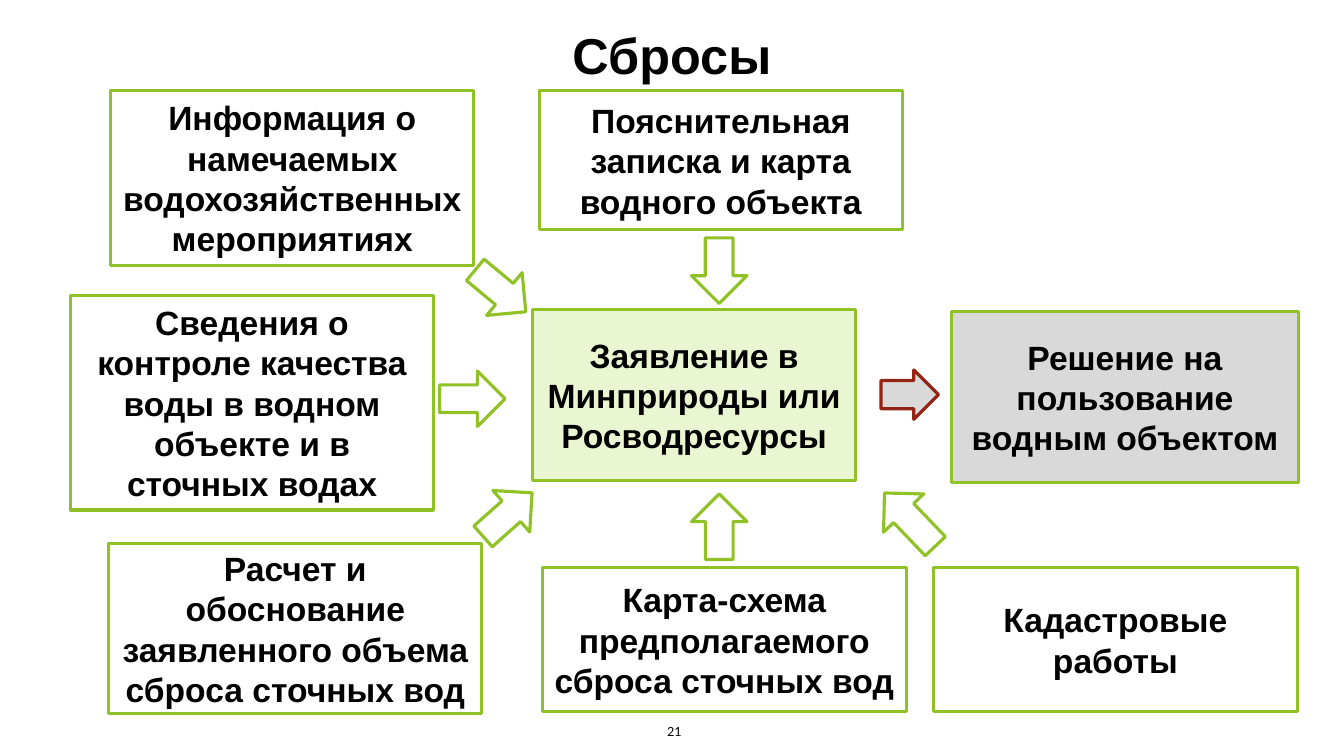
from pptx import Presentation
from pptx.dml.color import RGBColor
from pptx.enum.shapes import MSO_SHAPE as Preset
from pptx.enum.text import MSO_ANCHOR as Anchor, PP_ALIGN as Align
from pptx.util import Inches, Pt

BLACK = RGBColor(0x00, 0x00, 0x00)
WHITE = RGBColor(0xFF, 0xFF, 0xFF)
GREEN = RGBColor(0x90, 0xC2, 0x26)
PALE_GREEN = RGBColor(0xEA, 0xF6, 0xD1)
GREY = RGBColor(0xD9, 0xD9, 0xD9)
DARK_RED = RGBColor(0x93, 0x23, 0x13)


class DiagramSlide:
    """Draws on one slide; every area is in percent of the slide's size."""

    font = "Arial"
    line_width = Pt(2.25)

    def __init__(self, presentation):
        self.width = presentation.slide_width
        self.height = presentation.slide_height
        self.slide = presentation.slides.add_slide(presentation.slide_layouts[5])

    def place(self, left, top, width, height):
        return (round(self.width * left / 100), round(self.height * top / 100),
                round(self.width * width / 100), round(self.height * height / 100))

    def set_label(self, shape, text, size, bold=True, font=font,
                  align=Align.CENTER, anchor=Anchor.MIDDLE):
        frame = shape.text_frame
        frame.text = text
        frame.word_wrap = True
        frame.vertical_anchor = anchor
        paragraph = frame.paragraphs[0]
        paragraph.alignment = align
        style = paragraph.runs[0].font
        style.name, style.size, style.bold = font, Pt(size), bold
        style.color.rgb = BLACK

    def title(self, text, area):
        shape = self.slide.shapes.title
        shape.left, shape.top, shape.width, shape.height = self.place(*area)
        self.set_label(shape, text, 36, anchor=Anchor.TOP)

    def outlined(self, preset, area, fill, line):
        shape = self.slide.shapes.add_shape(preset, *self.place(*area))
        shape.shadow.inherit = False
        shape.fill.solid()
        shape.fill.fore_color.rgb = fill
        shape.line.color.rgb = line
        shape.line.width = self.line_width
        return shape

    def box(self, text, area, fill=WHITE):
        shape = self.outlined(Preset.RECTANGLE, area, fill, GREEN)
        self.set_label(shape, text, 24)

    def arrow(self, area, rotation, fill=WHITE, line=GREEN, shaft=0.5):
        shape = self.outlined(Preset.DOWN_ARROW, area, fill, line)
        shape.adjustments[0] = shaft
        shape.rotation = rotation

    def page_number(self, text, area):
        shape = self.slide.shapes.add_textbox(*self.place(*area))
        self.set_label(shape, text, 9, bold=False, font="Lato", align=Align.RIGHT)


def main():
    presentation = Presentation()
    presentation.slide_width = Inches(13.33)
    presentation.slide_height = Inches(7.5)
    diagram = DiagramSlide(presentation)
    diagram.title("Сбросы", (32.93, 2.53, 34.13, 9.47))

    # Documents attached to the application
    documents = [
        ("Сведения о контроле качества воды в водном объекте и в сточных водах",
         (5.25, 39.07, 27, 28.4)),
        ("Пояснительная записка и карта водного объекта", (40.13, 12, 27, 18.4)),
        ("Информация о намечаемых водохозяйственных мероприятиях",
         (8.25, 12, 27, 23.07)),
        ("Карта-схема предполагаемого сброса сточных вод",
         (40.35, 75.07, 27.08, 19.07)),
        ("Расчет и обоснование заявленного объема сброса сточных вод",
         (8.1, 71.87, 27.75, 22.53)),
        ("Кадастровые работы", (69.45, 75.07, 27.08, 19.07)),
    ]
    for text, area in documents:
        diagram.box(text, area)

    # Application and the resulting decision
    diagram.box("Заявление в Минприроды или Росводресурсы",
                (39.6, 40.93, 24.08, 22.67), PALE_GREEN)
    diagram.box("Решение на пользование водным объектом",
                (70.8, 41.2, 25.8, 22.67), GREY)

    # Arrows towards the application: left, top, height, rotation
    for left, top, height, rotation in [
        (35.18, 34.13, 8.67, 309.7),
        (51.45, 31.47, 8.67, 0),
        (33.08, 48.4, 8.67, 270),
        (35.7, 63.73, 8.67, 228.4),
        (51.45, 65.33, 8.67, 180),
        (65.63, 63.87, 9.73, 136.4),
    ]:
        diagram.arrow((left, top, 4.13, height), rotation)

    # Arrow from the application to the decision
    diagram.arrow((65.85, 48.4, 3.68, 7.6), 270, GREY, DARK_RED, shaft=0.57)

    diagram.page_number("21", (45.83, 94.13, 5.63, 5.33))
    presentation.save("out.pptx")


if __name__ == "__main__":
    main()
